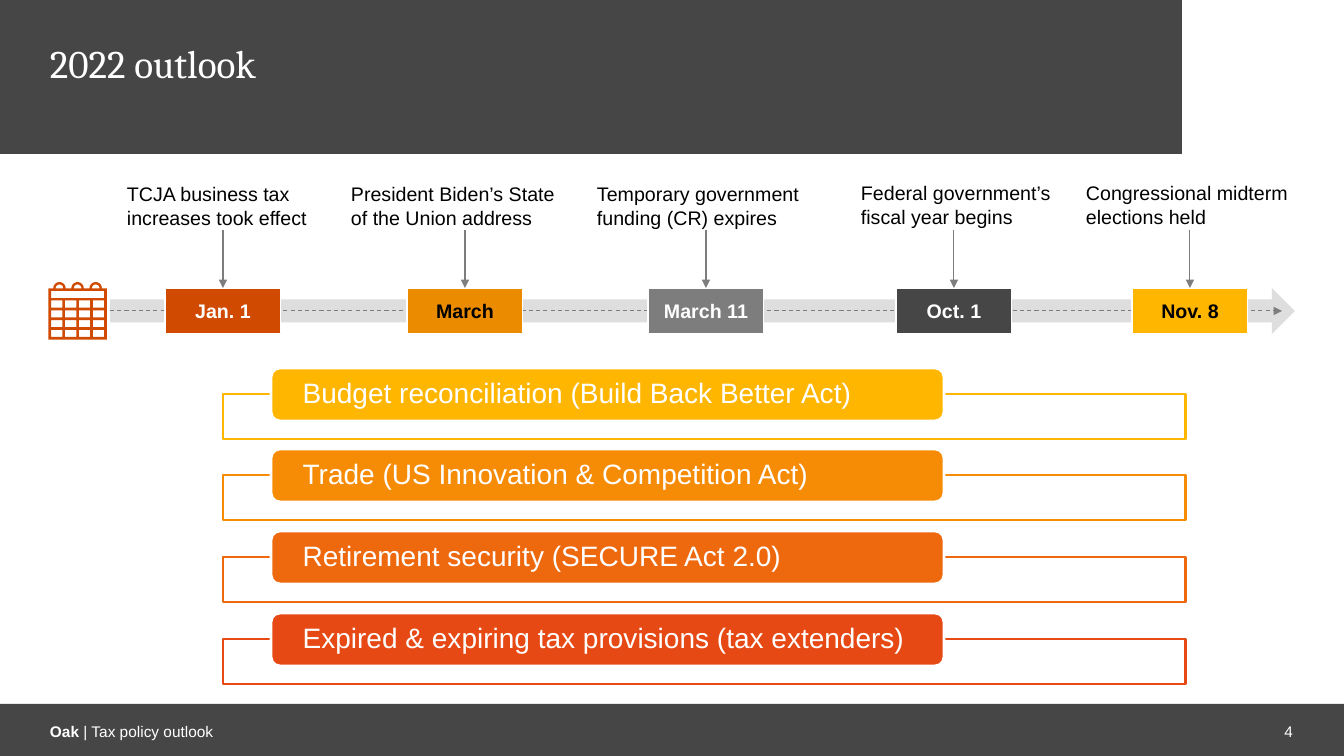
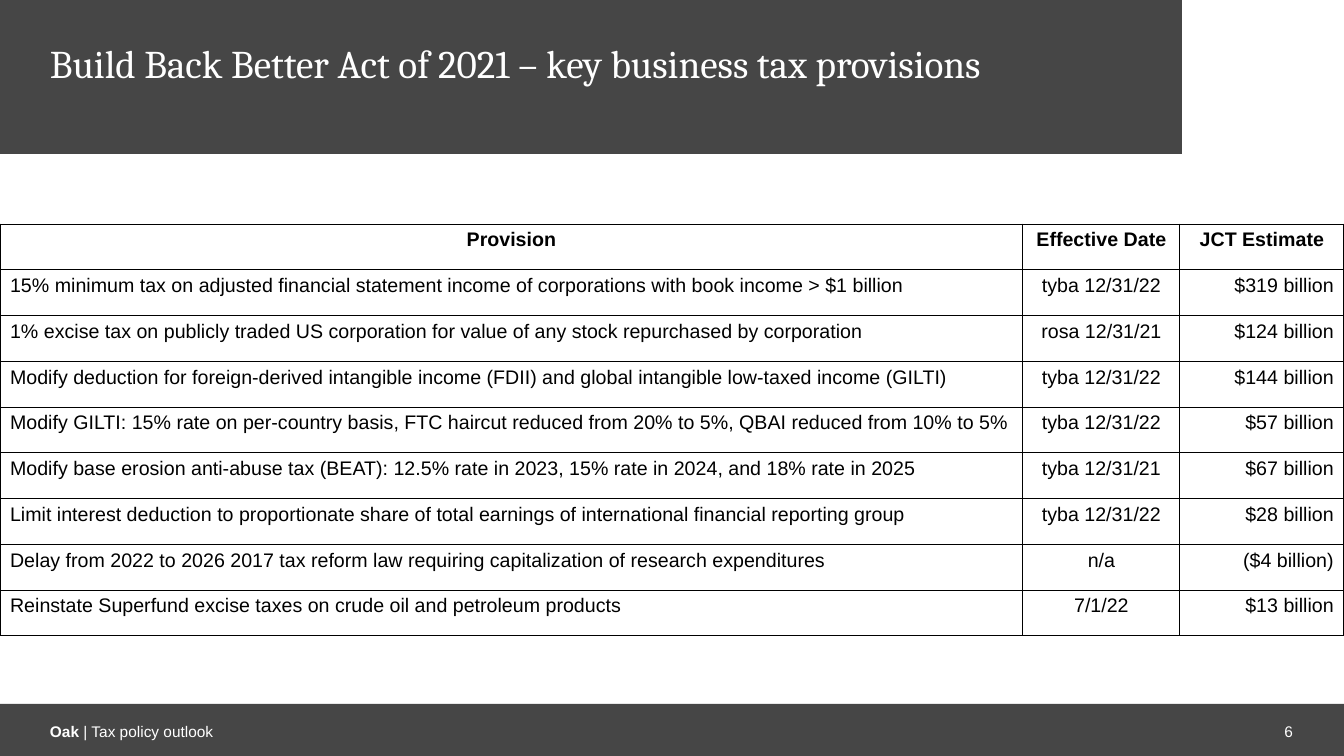
from math import cos, pi, sin

from lxml.etree import SubElement
from pptx import Presentation
from pptx.dml.color import RGBColor
from pptx.enum.dml import MSO_LINE
from pptx.enum.shapes import MSO_CONNECTOR, MSO_SHAPE
from pptx.enum.text import MSO_ANCHOR, PP_ALIGN
from pptx.oxml.ns import qn
from pptx.util import Emu, Pt

SLIDE_WIDTH = 1344
SLIDE_HEIGHT = 756
EMU_PER_PX = 12192000 / SLIDE_WIDTH

CHARCOAL = "464646"
GREY = "7D7D7D"
SILVER = "DEDEDE"
WHITE = "FFFFFF"
BLACK = "000000"
RUST = "D04A02"
ORANGE = "EB8C00"
YELLOW = "FFB600"


def px(length):
    return Emu(round(length * EMU_PER_PX))


def color(value):
    return RGBColor.from_string(value)


class Deck:
    body_font = "Arial"
    title_font = "Cambria"

    def __init__(self):
        self.presentation = Presentation()
        self.presentation.slide_width = px(SLIDE_WIDTH)
        self.presentation.slide_height = px(SLIDE_HEIGHT)
        self.slide = None

    def new_slide(self, title, number):
        self.slide = self.presentation.slides.add_slide(self.presentation.slide_layouts[6])
        self.shape(0, 0, 1182, 154, CHARCOAL)
        self.shape(0, 704, SLIDE_WIDTH, 52, CHARCOAL)
        self.text(50, 39, 1128, 46, [(title, False)], 28, WHITE, font=self.title_font)
        footer = [("Oak ", True), ("| Tax policy outlook", False)]
        self.text(50, 725, 454, 13, footer, 11, WHITE, anchor=MSO_ANCHOR.MIDDLE)
        self.text(991, 725, 302, 13, [(number, False)], 11, WHITE,
                  align=PP_ALIGN.RIGHT, anchor=MSO_ANCHOR.MIDDLE)

    def add_runs(self, paragraph, runs, size, text_color, align=PP_ALIGN.LEFT, font=None):
        paragraph.alignment = align
        for text, bold in runs:
            run = paragraph.add_run()
            run.text = text
            run.font.name = font or self.body_font
            run.font.size = Pt(size)
            run.font.bold = bold
            run.font.color.rgb = color(text_color)

    def fill_frame(self, frame, runs, size, text_color, align, anchor, insets=(0, 0), font=None):
        frame.word_wrap = True
        frame.vertical_anchor = anchor
        frame.margin_left = frame.margin_right = px(insets[0])
        frame.margin_top = frame.margin_bottom = px(insets[1])
        self.add_runs(frame.paragraphs[0], runs, size, text_color, align, font)

    def text(self, left, top, width, height, runs, size, text_color,
             align=PP_ALIGN.LEFT, anchor=MSO_ANCHOR.TOP, font=None):
        box = self.slide.shapes.add_textbox(px(left), px(top), px(width), px(height))
        self.fill_frame(box.text_frame, runs, size, text_color, align, anchor, font=font)

    def paint(self, shape, fill, line=None, line_width=0.75):
        shape.shadow.inherit = False
        shape.fill.solid()
        shape.fill.fore_color.rgb = color(fill)
        if line:
            shape.line.color.rgb = color(line)
            shape.line.width = Pt(line_width)
        else:
            shape.line.fill.background()

    def shape(self, left, top, width, height, fill, line=None, line_width=0.75,
              kind=MSO_SHAPE.RECTANGLE):
        shape = self.slide.shapes.add_shape(kind, px(left), px(top), px(width), px(height))
        self.paint(shape, fill, line, line_width)
        return shape

    def arrow(self, start, end, begin_shape=None, end_shape=None, dashed=False):
        connector = self.slide.shapes.add_connector(
            MSO_CONNECTOR.STRAIGHT, px(start[0]), px(start[1]), px(end[0]), px(end[1]))
        connector.line.color.rgb = color(GREY)
        connector.line.width = Pt(0.75)
        if dashed:
            connector.line.dash_style = MSO_LINE.DASH
        if begin_shape:
            connector.begin_connect(begin_shape, 3)
        if end_shape:
            connector.end_connect(end_shape, 0)
        properties = connector._element.spPr
        SubElement(properties.find(qn("a:ln")), qn("a:tailEnd"), type="triangle")
        SubElement(properties, qn("a:effectLst"))

    def date(self, center, label, fill, text_color):
        box = self.shape(center - 58, 288, 116, 46, fill, WHITE)
        self.fill_frame(box.text_frame, [(label, True)], 14, text_color,
                        PP_ALIGN.CENTER, MSO_ANCHOR.MIDDLE, (5, 5))
        self.arrow((center, 230), (center, 288), end_shape=box)

    def panel(self, top, label, accent):
        self.shape(223, top, 963, 45, WHITE, accent, 2)
        tab = self.shape(271, top - 26, 673, 53, accent, WHITE, 2, MSO_SHAPE.ROUNDED_RECTANGLE)
        tab.adjustments[0] = 0.17
        self.fill_frame(tab.text_frame, [(label, False)], 20, WHITE,
                        PP_ALIGN.LEFT, MSO_ANCHOR.MIDDLE, (29, 0))
        tab.text_frame.paragraphs[0].line_spacing = 0.9

    def calendar(self, fill):
        left, top, right, bottom = 484, 2883, 1068, 3397
        rings = [595, 776, 957]

        def arc(center, radius):
            angles = [pi * (1 - step / 12) for step in range(13)]
            return [(round(center + radius * cos(angle)), round(top - radius * sin(angle)))
                    for angle in angles]

        def box(x, y, width, height):
            return [(x, y), (x + width, y), (x + width, y + height), (x, y + height)]

        outline = [(left, bottom), (left, top)]
        for ring in rings:
            outline += arc(ring, 62)
        outline += [(right, top), (right, bottom)]
        holes = [arc(ring, 38) for ring in rings]
        holes.append(box(left + 27, top + 27, right - left - 54, 71))
        holes += [box(left + 27 + column * 139, 3005 + row * 98, 113, 71)
                  for row in range(4) for column in range(4)]

        builder = self.slide.shapes.build_freeform(*outline[0], scale=EMU_PER_PX / 10)
        builder.add_line_segments(outline[1:])
        for hole in holes:
            builder.move_to(*hole[0])
            builder.add_line_segments(hole[1:])
        self.paint(builder.convert_to_shape(), fill)

    def table(self, left, top, height, widths, rows):
        frame = self.slide.shapes.add_table(
            len(rows), len(widths), px(left), px(top), px(sum(widths)), px(height))
        table = frame.table
        table.first_row = table.horz_banding = False
        for column, width in zip(table.columns, widths):
            column.width = px(width)
        alignments = [PP_ALIGN.LEFT, PP_ALIGN.CENTER, PP_ALIGN.RIGHT]
        for row_index, row in enumerate(rows):
            header = row_index == 0
            for column_index, text in enumerate(row):
                cell = table.cell(row_index, column_index)
                align = PP_ALIGN.CENTER if header else alignments[column_index]
                self.add_runs(cell.text_frame.paragraphs[0], [(text, header)], 14, BLACK, align)
                self.border(cell)
                cell.fill.background()

    def border(self, cell):
        properties = cell._tc.get_or_add_tcPr()
        for side in ("lnL", "lnR", "lnT", "lnB"):
            line = SubElement(properties, qn(f"a:{side}"), w=str(Pt(0.75)))
            SubElement(SubElement(line, qn("a:solidFill")), qn("a:srgbClr"), val=BLACK)


EVENTS = [
    (223, "Jan. 1", RUST, WHITE, 127, 182, 192, "TCJA business tax increases took effect"),
    (465, "March", ORANGE, BLACK, 351, 182, 225, "President Biden’s State of the Union address"),
    (706, "March 11", GREY, WHITE, 597, 182, 218, "Temporary government funding (CR) expires"),
    (954, "Oct. 1", CHARCOAL, WHITE, 861, 181, 194, "Federal government’s fiscal year begins"),
    (1190, "Nov. 8", YELLOW, BLACK, 1086, 181, 208, "Congressional midterm elections held"),
]

PRIORITIES = [
    ("Budget reconciliation (Build Back Better Act)", YELLOW),
    ("Trade (US Innovation & Competition Act)", "F68C06"),
    ("Retirement security (SECURE Act 2.0)", "EE680E"),
    ("Expired & expiring tax provisions (tax extenders)", "E74915"),
]

PROVISIONS = [
    ("Provision", "Effective Date", "JCT Estimate"),
    ("15% minimum tax on adjusted financial statement income of corporations with book income > $1 billion",
     "tyba 12/31/22", "$319 billion"),
    ("1% excise tax on publicly traded US corporation for value of any stock repurchased by corporation",
     "rosa 12/31/21", "$124 billion"),
    ("Modify deduction for foreign-derived intangible income (FDII) and global intangible low-taxed income (GILTI)",
     "tyba 12/31/22", "$144 billion"),
    ("Modify GILTI: 15% rate on per-country basis, FTC haircut reduced from 20% to 5%, QBAI reduced from 10% to 5%",
     "tyba 12/31/22", "$57 billion"),
    ("Modify base erosion anti-abuse tax (BEAT): 12.5% rate in 2023, 15% rate in 2024, and 18% rate in 2025",
     "tyba 12/31/21", "$67 billion"),
    ("Limit interest deduction to proportionate share of total earnings of international financial reporting group",
     "tyba 12/31/22", "$28 billion"),
    ("Delay from 2022 to 2026 2017 tax reform law requiring capitalization of research expenditures",
     "n/a", "($4 billion)"),
    ("Reinstate Superfund excise taxes on crude oil and petroleum products",
     "7/1/22", "$13 billion"),
]


def outlook_slide(deck):
    deck.new_slide("2022 outlook", "4")
    deck.shape(107, 288, 1188, 46, SILVER, kind=MSO_SHAPE.RIGHT_ARROW)
    calendar_backing = deck.shape(48, 273, 62, 76, WHITE)
    deck.arrow((110, 311), (1282, 311), begin_shape=calendar_backing, dashed=True)
    deck.calendar(RUST)
    for center, label, fill, text_color, left, top, width, caption in EVENTS:
        deck.text(left, top, width, 48, [(caption, False)], 14, BLACK)
        deck.date(center, label, fill, text_color)
    for index, (label, accent) in enumerate(PRIORITIES):
        deck.panel(394 + index * 245 // 3, label, accent)


def provisions_slide(deck):
    deck.new_slide("Build Back Better Act of 2021 – key business tax provisions", "6")
    deck.table(0, 224, 412, [1023, 157, 164], PROVISIONS)


def main():
    deck = Deck()
    outlook_slide(deck)
    provisions_slide(deck)
    deck.presentation.save("out.pptx")


if __name__ == "__main__":
    main()
